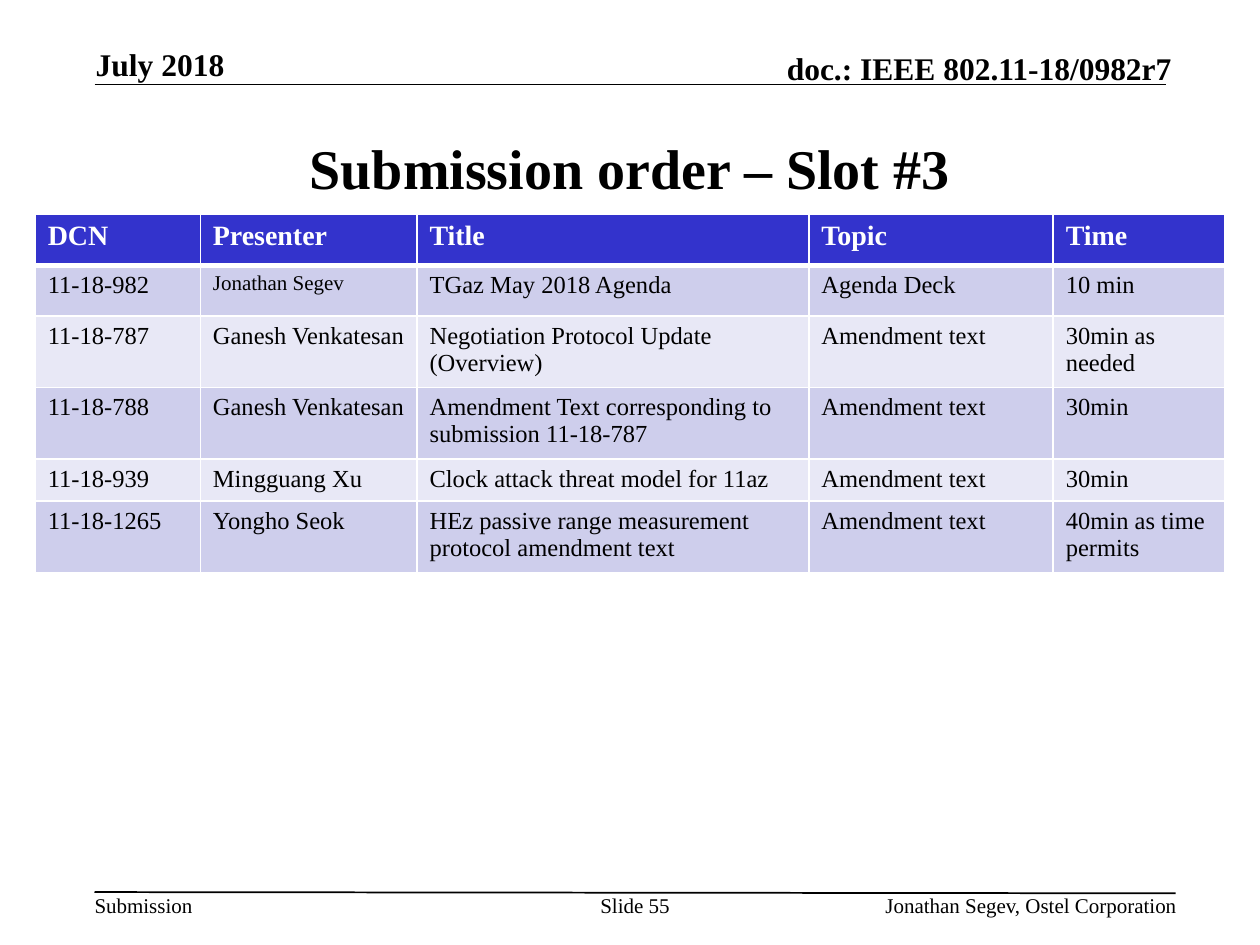
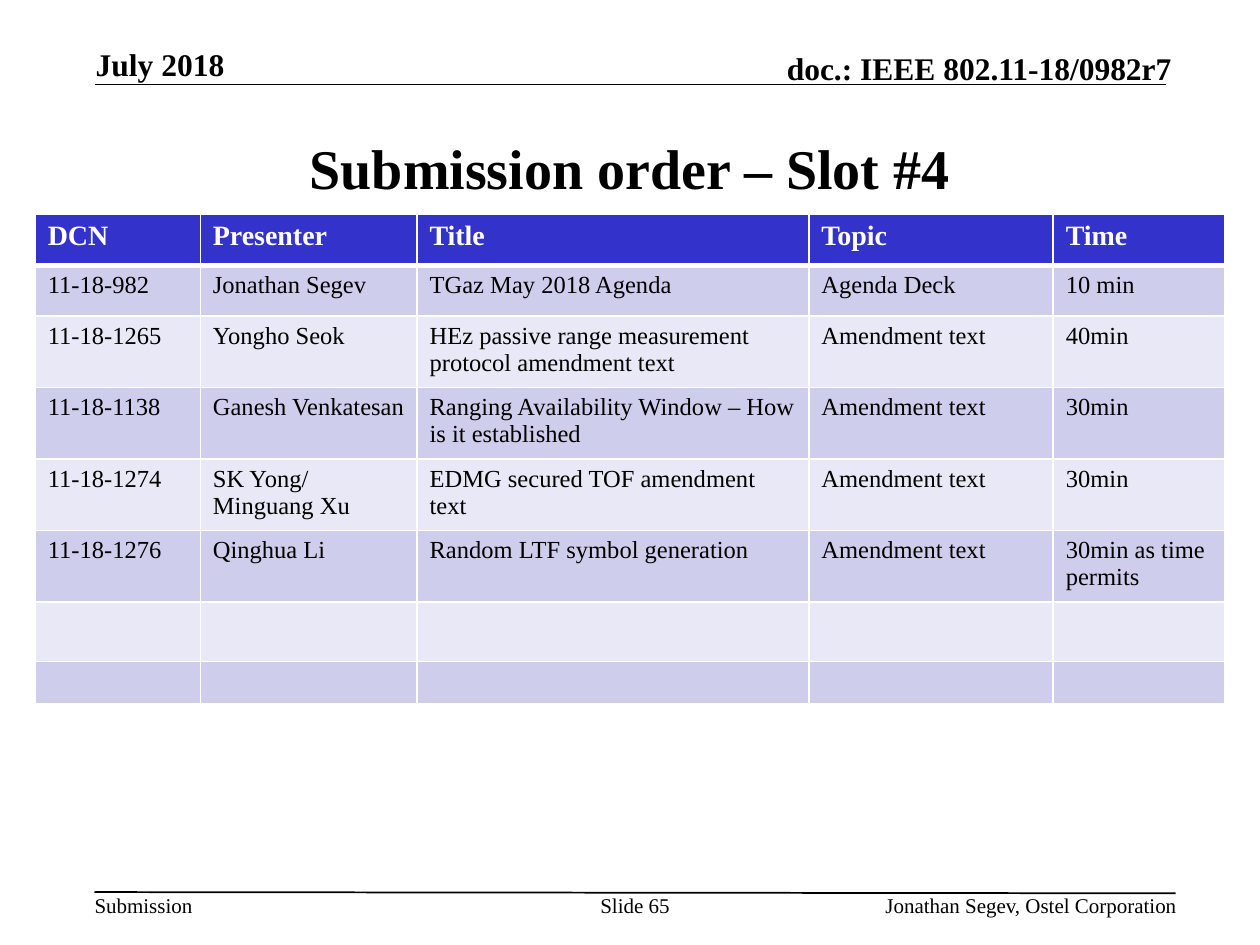
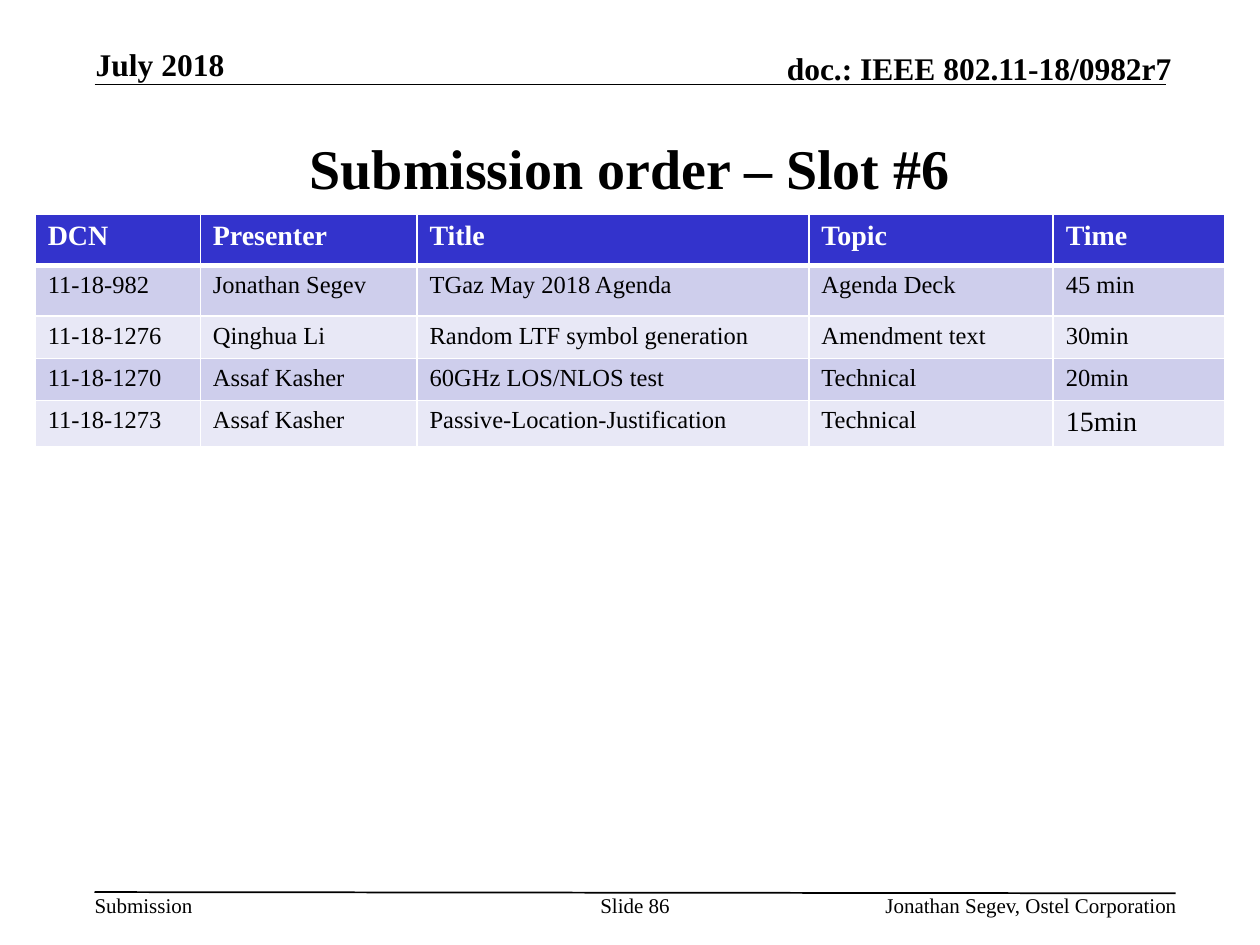
import pptx
import pptx.dml.color
import pptx.enum.shapes
import pptx.enum.text
import pptx.oxml
import pptx.oxml.ns
import pptx.util
from lxml import etree

ANCHOR = pptx.enum.text.MSO_ANCHOR
ALIGN = pptx.enum.text.PP_ALIGN
COLOURS = {"ink": "000000", "paper": "FFFFFF", "header": "3333CC", "odd": "CECEEC", "even": "E8E8F6"}
FONT = "Times New Roman"
GRID_COLUMNS, GRID_ROWS = 40, 30
HEADINGS = ["DCN", "Presenter", "Title", "Topic", "Time"]
COLUMN_SPANS = [5.24, 6.88, 12.44, 7.76, 5.44]
ONE_LINE, TWO_LINES, TALL = 1.26, 2.12, 1.62
AMENDMENT = "Amendment text"

RUNNING_TEXTS = [
    ("July 2018", (3.04, 1.44, 8.2, 1.2), 18, ALIGN.LEFT),
    ("doc.: IEEE 802.11-18/0982r7", (21.88, 1.56, 15.32, 1.2), 18, ALIGN.RIGHT),
    ("Submission", (3, 28.32, 3.12, 0.8), 12, ALIGN.LEFT),
    ("Slide {page}", (19, 28.32, 2.32, 1.6), 12, ALIGN.CENTER),
    ("Jonathan Segev, Ostel Corporation", (23.44, 28.32, 13.92, 0.8), 12, ALIGN.RIGHT),
]
RULES = [(3, 2.68, 37, 2.68), (3, 28.32, 37.32, 28.36)]

SLOTS = [
    {
        "number": 3, "page": 55, "sizes": {(1, 1): 12},
        "heights": [TALL, TALL, TWO_LINES, TWO_LINES, ONE_LINE, TWO_LINES],
        "submissions": [
            ["11-18-982", "Jonathan Segev", "TGaz May 2018 Agenda", "Agenda Deck", "10 min"],
            ["11-18-787", "Ganesh Venkatesan", "Negotiation Protocol Update (Overview)", AMENDMENT, "30min as needed"],
            ["11-18-788", "Ganesh Venkatesan", "Amendment Text corresponding to submission 11-18-787", AMENDMENT, "30min"],
            ["11-18-939", "Mingguang Xu", "Clock attack threat model for 11az", AMENDMENT, "30min"],
            ["11-18-1265", "Yongho Seok", "HEz passive range measurement protocol amendment text", AMENDMENT,
             "40min as time permits"],
        ],
    },
    {
        "number": 4, "page": 65, "sizes": {},
        "heights": [TALL, TALL] + [TWO_LINES] * 4 + [1.88, 1.36],
        "submissions": [
            ["11-18-982", "Jonathan Segev", "TGaz May 2018 Agenda", "Agenda Deck", "10 min"],
            ["11-18-1265", "Yongho Seok", "HEz passive range measurement protocol amendment text", AMENDMENT, "40min"],
            ["11-18-1138", "Ganesh Venkatesan", "Ranging Availability Window – How is it established", AMENDMENT, "30min"],
            ["11-18-1274", "SK Yong/\nMinguang Xu", "EDMG secured TOF amendment text", AMENDMENT, "30min"],
            ["11-18-1276", "Qinghua Li", "Random LTF symbol generation", AMENDMENT, "30min as time permits"],
            [""] * 5,
            [""] * 5,
        ],
    },
    {
        "number": 6, "page": 86, "sizes": {(4, 4): 16},
        "heights": [TALL, TALL, ONE_LINE, ONE_LINE, 1.38],
        "submissions": [
            ["11-18-982", "Jonathan Segev", "TGaz May 2018 Agenda", "Agenda Deck", "45 min"],
            ["11-18-1276", "Qinghua Li", "Random LTF symbol generation", AMENDMENT, "30min"],
            ["11-18-1270", "Assaf Kasher", "60GHz LOS/NLOS test", "Technical", "20min"],
            ["11-18-1273", "Assaf Kasher", "Passive-Location-Justification", "Technical", "15min"],
        ],
    },
]


class AgendaDeck:
    """Holds the shared style and the slide being built."""

    def __init__(self):
        self.presentation = pptx.Presentation()
        self.presentation.slide_width = pptx.util.Inches(10)
        self.presentation.slide_height = pptx.util.Inches(7.5)
        self.slide = None

    def across(self, columns):
        return round(self.presentation.slide_width * columns / GRID_COLUMNS)

    def down(self, rows):
        return round(self.presentation.slide_height * rows / GRID_ROWS)

    def box(self, columns, rows, width, height):
        return self.across(columns), self.down(rows), self.across(width), self.down(height)

    def colour(self, name):
        return pptx.dml.color.RGBColor.from_string(COLOURS[name])

    def apply(self, target, values):
        for attribute, value in values.items():
            setattr(target, attribute, value)

    def set_text(self, frame, text, size, bold, ink="ink", align=ALIGN.LEFT):
        frame.text = text
        for paragraph in frame.paragraphs:
            paragraph.alignment = align
            for run in paragraph.runs:
                self.apply(run.font, {"name": FONT, "size": pptx.util.Pt(size), "bold": bold})
                run.font.color.rgb = self.colour(ink)
            if not text:
                etree.SubElement(paragraph._p, pptx.oxml.ns.qn("a:endParaRPr"), sz=str(size * 100))

    def add_slide(self, page):
        self.slide = self.presentation.slides.add_slide(self.presentation.slide_layouts[5])
        for rule in RULES:
            self.add_rule(*rule)
        for text, place, size, align in RUNNING_TEXTS:
            self.add_running_text(text.format(page=page), place, size, align)

    def add_rule(self, start_column, start_row, end_column, end_row):
        rule = self.slide.shapes.add_connector(
            pptx.enum.shapes.MSO_CONNECTOR.STRAIGHT,
            self.across(start_column), self.down(start_row), self.across(end_column), self.down(end_row))
        rule.line.color.rgb = self.colour("ink")
        rule.line.width = pptx.util.Pt(1)
        etree.SubElement(rule._element.spPr, pptx.oxml.ns.qn("a:effectLst"))

    def add_running_text(self, text, place, size, align):
        is_header = size == 18
        frame = self.slide.shapes.add_textbox(*self.box(*place)).text_frame
        self.apply(frame, {
            "margin_left": 0, "margin_right": 0, "margin_top": 0, "margin_bottom": 0, "word_wrap": True,
            "vertical_anchor": ANCHOR.BOTTOM if is_header else ANCHOR.TOP})
        self.set_text(frame, text, size, is_header, align=align)

    def add_title(self, text):
        title = self.slide.shapes.title
        self.apply(title, dict(zip(("left", "top", "width", "height"), self.box(3, 3, 34, 4.64))))
        self.apply(title.text_frame, {
            "vertical_anchor": ANCHOR.MIDDLE, "word_wrap": True, "auto_size": pptx.enum.text.MSO_AUTO_SIZE.NONE})
        self.set_text(title.text_frame, text, 32, True, align=ALIGN.CENTER)

    def add_borders(self, cell, top, bottom):
        properties = cell._tc.get_or_add_tcPr()
        for index, (side, points) in enumerate({"L": 1, "R": 1, "T": top, "B": bottom}.items()):
            properties.insert(index, pptx.oxml.parse_xml(
                f'<a:ln{side} {pptx.oxml.ns.nsdecls("a")} w="{pptx.util.Pt(points)}"><a:solidFill>'
                f'<a:srgbClr val="{COLOURS["paper"]}"/></a:solidFill></a:ln{side}>'))

    def add_schedule(self, submissions, heights, sizes):
        entries = [HEADINGS] + submissions
        place = self.box(1.12, 6.8, sum(COLUMN_SPANS), sum(heights))
        schedule = self.slide.shapes.add_table(len(entries), len(HEADINGS), *place).table
        for column, span in zip(schedule.columns, COLUMN_SPANS):
            column.width = self.across(span)
        for row, (entry, height) in enumerate(zip(entries, heights)):
            schedule.rows[row].height = self.down(height)
            is_heading = row == 0
            band = "header" if is_heading else "odd" if row % 2 else "even"
            for column, text in enumerate(entry):
                cell = schedule.cell(row, column)
                cell.fill.solid()
                cell.fill.fore_color.rgb = self.colour(band)
                self.add_borders(cell, 3 if row == 1 else 1, 3 if is_heading else 1)
                size = sizes.get((row, column), 16 if is_heading else 14)
                self.set_text(cell.text_frame, text, size, is_heading, "paper" if is_heading else "ink")


def main():
    deck = AgendaDeck()
    for slot in SLOTS:
        deck.add_slide(slot["page"])
        deck.add_title(f"Submission order – Slot #{slot['number']}")
        deck.add_schedule(slot["submissions"], slot["heights"], slot["sizes"])
    deck.presentation.save("out.pptx")


if __name__ == "__main__":
    main()
